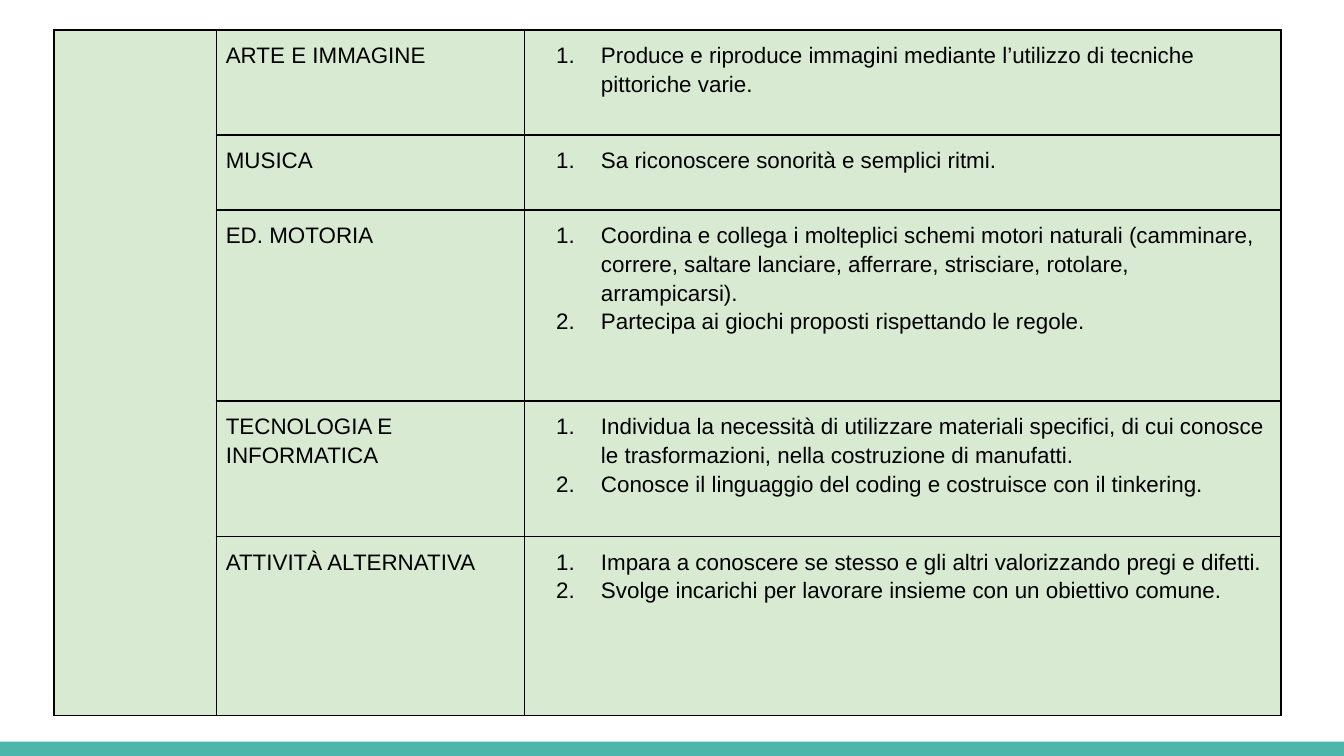
from lxml.etree import SubElement
from pptx import Presentation
from pptx.dml.color import RGBColor
from pptx.enum.shapes import MSO_SHAPE
from pptx.oxml import parse_xml
from pptx.oxml.ns import qn
from pptx.util import Pt

BLACK = RGBColor(0x00, 0x00, 0x00)
PALE_GREEN = RGBColor(0xD9, 0xEA, 0xD3)
TEAL = RGBColor(0x4D, 0xB6, 0xAC)
DRAWING_NS = "http://schemas.openxmlformats.org/drawingml/2006/main"

COLUMN_WIDTHS = [87, 165, 405.4]
SUBJECTS = [
    (56.2, "ARTE E IMMAGINE", [
        "Produce e riproduce immagini mediante l’utilizzo di tecniche pittoriche varie.",
    ]),
    (40.3, "MUSICA", ["Sa riconoscere sonorità e semplici ritmi."]),
    (102.4, "ED. MOTORIA", [
        "Coordina e collega i molteplici schemi motori naturali (camminare, correre, "
        "saltare lanciare, afferrare, strisciare, rotolare, arrampicarsi).",
        "Partecipa ai giochi proposti rispettando le regole.",
    ]),
    (72.7, "TECNOLOGIA E INFORMATICA", [
        "Individua la necessità di utilizzare materiali specifici, di cui conosce "
        "le trasformazioni, nella costruzione di manufatti.",
        "Conosce il linguaggio del coding e costruisce con il tinkering.",
    ]),
    (95.8, "ATTIVITÀ ALTERNATIVA", [
        "Impara a conoscere se stesso e gli altri valorizzando pregi e difetti.",
        "Svolge incarichi per lavorare insieme con un obiettivo comune.",
    ]),
]


def format_cell(cell):
    """Give a cell its fill, margins and thin black borders."""
    cell.fill.solid()
    cell.fill.fore_color.rgb = PALE_GREEN
    cell.margin_left = cell.margin_right = Pt(5)
    cell.margin_top = cell.margin_bottom = Pt(5)
    properties = cell._tc.get_or_add_tcPr()
    for position, side in enumerate(("lnL", "lnR", "lnT", "lnB")):
        border = parse_xml(
            f'<a:{side} xmlns:a="{DRAWING_NS}" w="{Pt(1)}"><a:solidFill>'
            f'<a:srgbClr val="{BLACK}"/></a:solidFill></a:{side}>'
        )
        properties.insert(position, border)


def write_cell(cell, lines, numbered=False):
    """Write one paragraph per line, numbered on request."""
    cell.text = "\n".join(lines)
    for paragraph in cell.text_frame.paragraphs:
        paragraph.line_spacing = 1.15
        paragraph.font.name = "Arial"
        paragraph.font.size = Pt(12)
        paragraph.font.color.rgb = BLACK
        if numbered:
            number_paragraph(paragraph)


def number_paragraph(paragraph):
    """Turn a paragraph into an item of a numbered list."""
    properties = paragraph._p.get_or_add_pPr()
    properties.set("marL", str(Pt(36)))
    properties.set("indent", str(Pt(-24)))
    bullet = SubElement(properties, qn("a:buAutoNum"), type="arabicPeriod")
    default_font = properties.find(qn("a:defRPr"))
    if default_font is not None:
        default_font.addprevious(bullet)


def add_subject_table(page, left, top, width, height):
    """Place the table of subjects and their goals in the given box."""
    frame = page.shapes.add_table(len(SUBJECTS), len(COLUMN_WIDTHS), left, top, width, height)
    table = frame.table
    table.first_row = table.horz_banding = False
    for column, column_width in zip(table.columns, COLUMN_WIDTHS):
        column.width = Pt(column_width)
    for index, (row_height, subject, goals) in enumerate(SUBJECTS):
        table.rows[index].height = Pt(row_height)
        write_cell(table.cell(index, 1), [subject])
        write_cell(table.cell(index, 2), goals, numbered=True)
        for cell in table.rows[index].cells:
            format_cell(cell)
    table.cell(0, 0).merge(table.cell(len(SUBJECTS) - 1, 0))


def add_footer_band(page, left, top, width, height):
    """Place the coloured band in the given box."""
    band = page.shapes.add_shape(MSO_SHAPE.RECTANGLE, left, top, width, height)
    band.shadow.inherit = False
    band.fill.solid()
    band.fill.fore_color.rgb = TEAL
    band.line.fill.background()


def main():
    """Build the slide and save the deck."""
    deck = Presentation()
    deck.slide_width, deck.slide_height = Pt(720), Pt(405)
    page = deck.slides.add_slide(deck.slide_layouts[6])
    add_footer_band(page, 0, Pt(397.4), deck.slide_width, Pt(7.6))
    table_height = sum(row_height for row_height, _, _ in SUBJECTS)
    add_subject_table(page, Pt(29), Pt(16), Pt(sum(COLUMN_WIDTHS)), Pt(table_height))
    deck.save("out.pptx")


if __name__ == "__main__":
    main()
